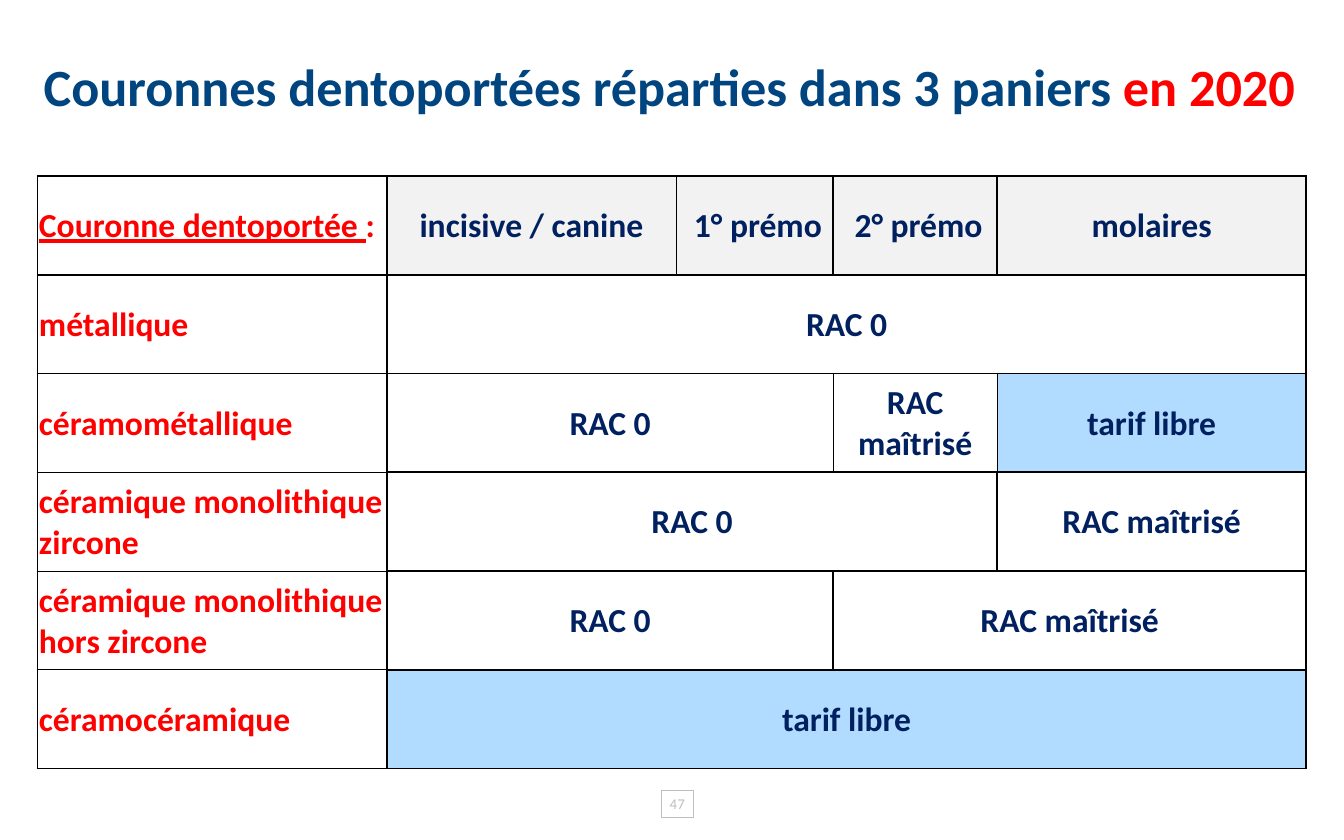
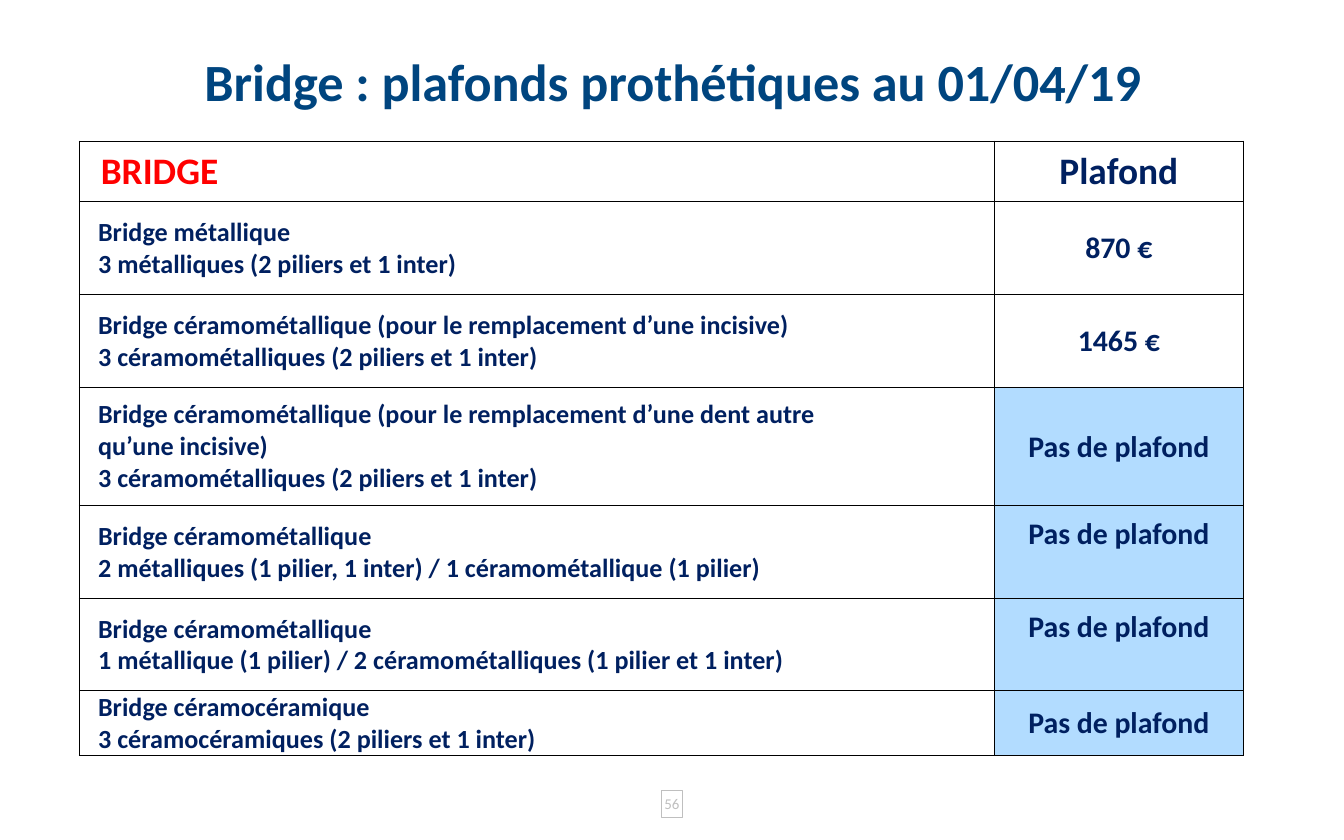
"""Build two slides of tables on dental crowns and bridges."""
from dataclasses import dataclass

from lxml import etree
from pptx import Presentation
from pptx.dml.color import RGBColor
from pptx.enum.shapes import MSO_SHAPE
from pptx.enum.text import MSO_ANCHOR, PP_ALIGN
from pptx.oxml.ns import qn
from pptx.slide import Slide
from pptx.table import _Cell
from pptx.text.text import TextFrame
from pptx.util import Inches, Pt

RECTANGLE = MSO_SHAPE.RECTANGLE
MIDDLE = MSO_ANCHOR.MIDDLE
LEFT = PP_ALIGN.LEFT
CENTER = PP_ALIGN.CENTER

TITLE_BLUE = RGBColor(0x00, 0x45, 0x7F)
NAVY = RGBColor(0x00, 0x20, 0x60)
RED = RGBColor(0xFF, 0x00, 0x00)
BLACK = RGBColor(0x00, 0x00, 0x00)
WHITE = RGBColor(0xFF, 0xFF, 0xFF)
PALE_GREY = RGBColor(0xF2, 0xF2, 0xF2)
FOOTER_GREY = RGBColor(0xBF, 0xBF, 0xBF)
FREE_BLUE = RGBColor(0xB2, 0xDC, 0xFF)

FONT = "Calibri"
PAGE_WIDTH = Inches(10)
PAGE_HEIGHT = Inches(6.25)
COLUMN = PAGE_WIDTH / 100
ROW = PAGE_HEIGHT / 100
THICK = 1
THIN = 0.5
SIDES = "LRTB"


@dataclass(frozen=True)
class Area:
    """Place on the grid of 100 columns by 100 rows."""

    left: float
    top: float
    width: float
    height: float

    def lengths(self) -> tuple[int, int, int, int]:
        """Return left, top, width and height as slide lengths."""
        return (int(self.left * COLUMN), int(self.top * ROW),
                int(self.width * COLUMN), int(self.height * ROW))


@dataclass(frozen=True)
class Span:
    """Stretch of text in one format."""

    text: str
    size: float = 18
    color: RGBColor = NAVY
    bold: bool = True
    underline: bool = False


Lines = tuple[tuple[Span, ...], ...]


@dataclass(frozen=True)
class Entry:
    """Table cell with its fill, span, indent and thin borders."""

    lines: Lines
    align: PP_ALIGN = CENTER
    fill: RGBColor = WHITE
    columns: int = 1
    indent: float = 0.1
    raised: float = 0
    thin: str = ""


@dataclass(frozen=True)
class Grid:
    """Table with its column widths, row heights and entries."""

    left: float
    top: float
    widths: tuple[float, ...]
    heights: tuple[float, ...]
    rows: tuple[tuple[Entry, ...], ...]


@dataclass(frozen=True)
class Page:
    """Slide with a title, a table and a page number."""

    title: tuple[Span, ...]
    title_area: Area
    number: str
    number_width: float
    grid: Grid


def write(frame: TextFrame, lines: Lines, align: PP_ALIGN) -> None:
    """Write formatted lines into a text frame."""
    frame.word_wrap = True
    for index, line in enumerate(lines):
        para = frame.paragraphs[0] if index == 0 else frame.add_paragraph()
        para.alignment = align
        for span in line:
            run = para.add_run()
            run.text = span.text
            formats = {"name": FONT, "size": Pt(span.size), "bold": span.bold,
                       "underline": span.underline}
            for name, value in formats.items():
                setattr(run.font, name, value)
            run.font.color.rgb = span.color


def add_title(slide: Slide, page: Page) -> None:
    """Add the centred title."""
    box = slide.shapes.add_textbox(*page.title_area.lengths())
    box.text_frame.vertical_anchor = MIDDLE
    write(box.text_frame, (page.title,), CENTER)


def add_number(slide: Slide, page: Page) -> None:
    """Add the outlined page number."""
    area = Area(49.2, 94.08, page.number_width, 3.2)
    box = slide.shapes.add_shape(RECTANGLE, *area.lengths())
    box.shadow.inherit = False
    box.fill.background()
    box.line.color.rgb = FOOTER_GREY
    box.line.width = Pt(THIN)
    frame = box.text_frame
    formats = {"margin_left": 0, "margin_right": 0, "margin_top": 0,
               "margin_bottom": 0, "vertical_anchor": MIDDLE}
    for name, value in formats.items():
        setattr(frame, name, value)
    write(frame, ((Span(page.number, 8, FOOTER_GREY, False),),), CENTER)


def add_borders(cell: _Cell, thin: str) -> None:
    """Draw the four borders, with the named sides thin."""
    properties = cell._tc.get_or_add_tcPr()
    for index, side in enumerate(SIDES):
        width = Pt(THIN if side in thin else THICK)
        line = etree.Element(qn(f"a:ln{side}"), w=str(width))
        fill = etree.SubElement(line, qn("a:solidFill"))
        etree.SubElement(fill, qn("a:srgbClr"), val=str(BLACK))
        properties.insert(index, line)


def fill_cell(cell: _Cell, entry: Entry) -> None:
    """Set margins and text of a cell."""
    formats = {"margin_left": int(entry.indent * COLUMN),
               "margin_right": int(0.1 * COLUMN),
               "margin_top": int(0.16 * ROW),
               "margin_bottom": int(entry.raised * ROW),
               "vertical_anchor": MIDDLE}
    for name, value in formats.items():
        setattr(cell, name, value)
    write(cell.text_frame, entry.lines, entry.align)


def add_grid(slide: Slide, grid: Grid) -> None:
    """Add the table with merged cells."""
    area = Area(grid.left, grid.top, sum(grid.widths), sum(grid.heights))
    table = slide.shapes.add_table(
        len(grid.heights), len(grid.widths), *area.lengths()).table
    table.first_row = False
    table.horz_banding = False
    for column, width in zip(table.columns, grid.widths):
        column.width = int(width * COLUMN)
    for row, height in zip(table.rows, grid.heights):
        row.height = int(height * ROW)
    for row_index, entries in enumerate(grid.rows):
        start = 0
        for entry in entries:
            cells = [table.cell(row_index, start + step)
                     for step in range(entry.columns)]
            for cell in cells:
                cell.fill.solid()
                cell.fill.fore_color.rgb = entry.fill
                add_borders(cell, entry.thin)
            if entry.columns > 1:
                cells[0].merge(cells[-1])
            fill_cell(cells[0], entry)
            start += entry.columns


def crown(name: str, thin: str = "TB") -> Entry:
    """Return the label of a crown type."""
    return Entry(((Span(name, color=RED),),), LEFT, thin=thin)


def tooth(name: str, indent: float = 0.1, thin: str = "") -> Entry:
    """Return the heading of a tooth position."""
    return Entry(((Span(name),),), fill=PALE_GREY, indent=indent, thin=thin)


def basket(name: str, columns: int = 1, thin: str = "") -> Entry:
    """Return a price basket over some tooth positions."""
    fill = FREE_BLUE if name == FREE else WHITE
    return Entry(((Span(name),),), fill=fill, columns=columns, thin=thin)


def bridge(*lines: str) -> Entry:
    """Return the description of a bridge."""
    return Entry(tuple((Span(line, 14),) for line in lines), LEFT,
                 indent=1.4, thin=SIDES)


def ceiling(price: str, raised: float = 0) -> Entry:
    """Return the price ceiling of a bridge."""
    fill = FREE_BLUE if price == NO_CEILING else WHITE
    return Entry(((Span(price, 16),),), fill=fill, raised=raised, thin=SIDES)


ZERO = "RAC 0"
CAPPED = "RAC maîtrisé"
FREE = "tarif libre"
NO_CEILING = "Pas de plafond"
METAL_CERAMIC = "Bridge céramométallique"

CROWNS = Grid(2.8, 20.96, (26, 21.5, 11.7, 12.2, 23), (11.76,) * 6, (
    (Entry(((Span("Couronne dentoportée ", color=RED, underline=True),
             Span(":", color=RED)),), LEFT),
     tooth("incisive / canine", thin="R"), tooth("1° prémo", 0.6, "L"),
     tooth("2° prémo", 0.6), tooth("molaires")),
    (crown("métallique", "B"), basket(ZERO, 4)),
    (crown("céramométallique"), basket(ZERO, 2, "R"),
     basket(CAPPED, thin="LR"), basket(FREE, thin="L")),
    (crown("céramique monolithique zircone"), basket(ZERO, 3), basket(CAPPED)),
    (crown("céramique monolithique hors zircone"), basket(ZERO, 2),
     basket(CAPPED, 2)),
    (crown("céramocéramique", "T"), basket(FREE, 4)),
))

BRIDGES = Grid(5.9, 16.8, (68.1, 18.5),
               (7.2, 11.04, 11.04, 14.08, 11.04, 11.04, 7.68), (
    (Entry(((Span("BRIDGE", 20, RED),),), LEFT, indent=1.6, thin=SIDES),
     Entry(((Span("Plafond", 20),),), thin=SIDES)),
    (bridge("Bridge métallique", "3 métalliques (2 piliers et 1 inter)"),
     ceiling("870 €")),
    (bridge(f"{METAL_CERAMIC} (pour le remplacement d’une incisive)",
            "3 céramométalliques (2 piliers et 1 inter)"),
     ceiling("1465 €")),
    (bridge(f"{METAL_CERAMIC} (pour le remplacement d’une dent autre",
            "qu’une incisive)", "3 céramométalliques (2 piliers et 1 inter)"),
     ceiling(NO_CEILING)),
    (bridge(METAL_CERAMIC,
            "2 métalliques (1 pilier, 1 inter) / 1 céramométallique (1 pilier)"),
     ceiling(NO_CEILING, 4.3)),
    (bridge(METAL_CERAMIC,
            "1 métallique (1 pilier) / 2 céramométalliques (1 pilier et 1 inter)"),
     ceiling(NO_CEILING, 4.3)),
    (bridge("Bridge céramocéramique",
            "3 céramocéramiques (2 piliers et 1 inter)"),
     ceiling(NO_CEILING)),
))

PAGES = (
    Page((Span("Couronnes dentoportées réparties dans 3 paniers ", 28, TITLE_BLUE),
          Span("en 2020", 28, RED)),
         Area(0, 2.08, 99.6, 16.32), "47", 2.4, CROWNS),
    Page((Span("Bridge : plafonds prothétiques au 01/04/19", 28, TITLE_BLUE),),
         Area(2, 2.08, 96.1, 15.04), "56", 1.6, BRIDGES),
)


def main() -> None:
    """Build and save the deck."""
    deck = Presentation()
    deck.slide_width = PAGE_WIDTH
    deck.slide_height = PAGE_HEIGHT
    for page in PAGES:
        slide = deck.slides.add_slide(deck.slide_layouts[6])
        add_title(slide, page)
        add_number(slide, page)
        add_grid(slide, page.grid)
    deck.save("out.pptx")


if __name__ == "__main__":
    main()
